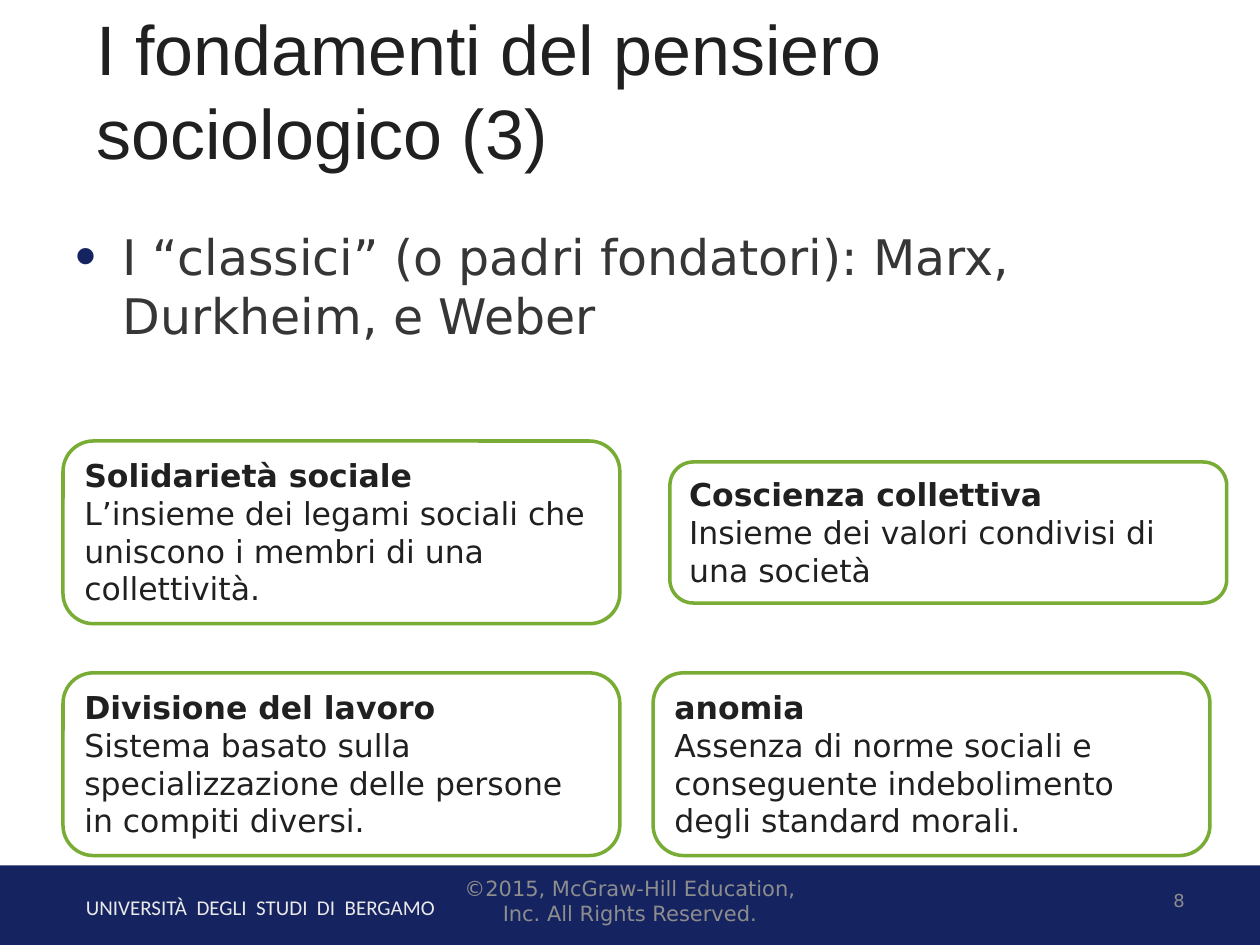
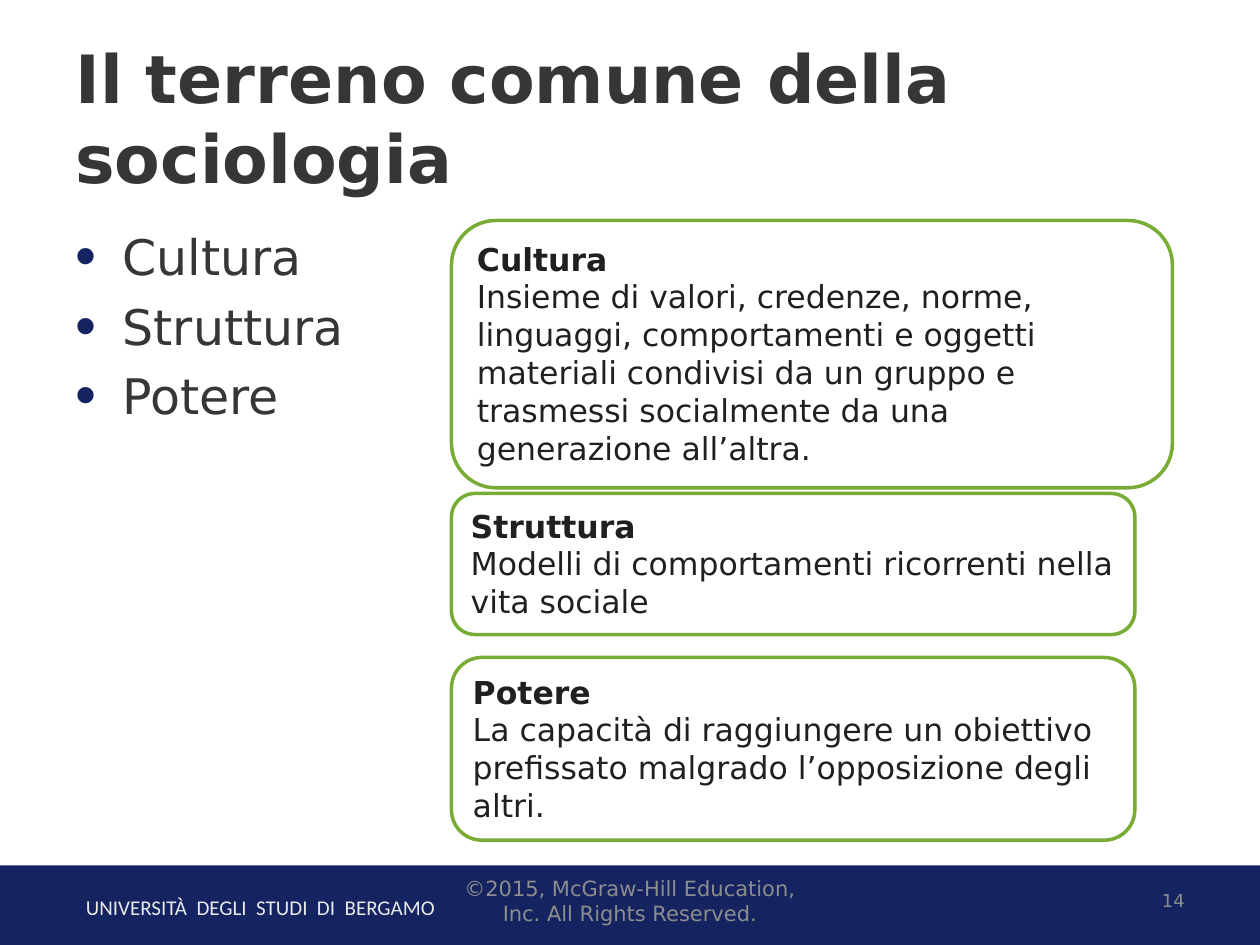
"""Builds two sociology slides with definition cards over a university footer band."""
import pptx
import pptx.dml.color
import pptx.enum.shapes
import pptx.enum.text
import pptx.oxml
import pptx.oxml.ns
import pptx.util

Pt = pptx.util.Pt
Anchor = pptx.enum.text.MSO_ANCHOR
Align = pptx.enum.text.PP_ALIGN
Preset = pptx.enum.shapes.MSO_SHAPE

NAVY, GREEN, WHITE = "152460", "78AC35", "FFFFFF"
INK, SLATE, GREY, PALE = "202020", "363636", "8D8D8D", "E9E9E9"
SANS = "DejaVu Sans"
CARD_WIDTH = 318.2
WIDE_CARD = 390.5
SHORT_CARD, TALL_CARD = 80.6, 104.4


def rgb(hex_code):
    """Return the colour for a hex string."""
    return pptx.dml.color.RGBColor.from_string(hex_code)


def add_run(paragraph, words, size, color, face=SANS, bold=False):
    """Append one formatted run to a paragraph."""
    run = paragraph.add_run()
    run.text = words
    run.font.size = Pt(size)
    run.font.name = face
    run.font.bold = bold
    run.font.color.rgb = rgb(color)


def add_frame(slide, left, top, width, height, anchor=Anchor.TOP):
    """Add a wrapping text box and return its text frame."""
    frame = slide.shapes.add_textbox(Pt(left), Pt(top), Pt(width), Pt(height)).text_frame
    frame.word_wrap = True
    frame.vertical_anchor = anchor
    return frame


def add_label(slide, words, bounds, size, color, face=SANS, bold=False,
              anchor=Anchor.MIDDLE, align=Align.LEFT):
    """Add a text box holding a single run."""
    paragraph = add_frame(slide, *bounds, anchor).paragraphs[0]
    paragraph.alignment = align
    add_run(paragraph, words, size, color, face, bold)


def add_panel(slide, preset, bounds, fill, outline=None):
    """Add a filled preset shape, outlined only if a colour is given."""
    panel = slide.shapes.add_shape(preset, *map(Pt, bounds))
    panel.shadow.inherit = False
    panel.fill.solid()
    panel.fill.fore_color.rgb = rgb(fill)
    if outline:
        panel.line.color.rgb = rgb(outline)
        panel.line.width = Pt(2)
    else:
        panel.line.fill.background()
    return panel


def add_card(slide, term, definition, left, top, width, height):
    """Add a rounded card with a bold term above its definition."""
    card = add_panel(slide, Preset.ROUNDED_RECTANGLE, (left, top, width, height), WHITE, GREEN)
    frame = card.text_frame
    frame.word_wrap = True
    frame.vertical_anchor = Anchor.TOP
    for paragraph, words in ((frame.paragraphs[0], term), (frame.add_paragraph(), definition)):
        paragraph.alignment = Align.LEFT
        add_run(paragraph, words, 18, INK, bold=words == term)


def add_bullet_mark(paragraph):
    """Give a paragraph a hanging navy bullet."""
    properties = paragraph._p.get_or_add_pPr()
    properties.set("marL", str(Pt(27)))
    properties.set("indent", str(-Pt(27)))
    namespace = pptx.oxml.ns.nsdecls("a")
    for mark in (f'<a:buClr {namespace}><a:srgbClr val="{NAVY}"/></a:buClr>',
                 f'<a:buSzPct {namespace} val="122000"/>',
                 f'<a:buFont {namespace} typeface="Arial"/>',
                 f'<a:buChar {namespace} char="•"/>'):
        properties.append(pptx.oxml.parse_xml(mark))


def add_topics(slide, topics):
    """Add the bulleted list of topics."""
    frame = add_frame(slide, 36, 126, 648, 356.4)
    for index, topic in enumerate(topics):
        paragraph = frame.add_paragraph() if index else frame.paragraphs[0]
        add_bullet_mark(paragraph)
        if index:
            paragraph.space_before = Pt(6)
        add_run(paragraph, topic, 28, SLATE)


def add_footer(slide, number):
    """Add the navy band with university, copyright and slide number."""
    add_panel(slide, Preset.RECTANGLE, (0, 494.6, 720, 45.4), NAVY)
    add_label(slide, "UNIVERSITÀ  DEGLI  STUDI  DI  BERGAMO", (42, 507.6, 419, 21.6),
              12, PALE, "Calibri", anchor=Anchor.TOP)
    add_label(slide, "©2015, McGraw-Hill Education, Inc. All Rights Reserved.",
              (247.5, 500.4, 225, 28.8), 12, GREY, align=Align.CENTER)
    add_label(slide, str(number), (516, 500.4, 168, 28.8), 10.2, GREY, align=Align.RIGHT)


def add_page(deck, number, topics):
    """Add a blank slide with its footer and topics."""
    slide = deck.slides.add_slide(deck.slide_layouts[6])
    add_footer(slide, number)
    add_topics(slide, topics)
    return slide


def main():
    """Build and save the deck."""
    deck = pptx.Presentation()
    deck.slide_width, deck.slide_height = Pt(720), Pt(540)

    founders = add_page(deck, 8, ["I “classici” (o padri fondatori): Marx, Durkheim, e Weber"])
    add_label(founders, "I fondamenti del pensiero sociologico (3)",
              (48, 12, 659.5, 78), 40, INK, "Arial")
    for term, definition, left, top, height in (
        ("Solidarietà sociale",
         "L’insieme dei legami sociali che uniscono i membri di una collettività.",
         36, 252, TALL_CARD),
        ("Divisione del lavoro",
         "Sistema basato sulla specializzazione delle persone in compiti diversi.",
         36, 384.5, TALL_CARD),
        ("Coscienza collettiva", "Insieme dei valori condivisi di una società",
         382.8, 264, SHORT_CARD),
        ("anomia",
         "Assenza di norme sociali e conseguente indebolimento degli standard morali.",
         373.2, 384.5, TALL_CARD),
    ):
        add_card(founders, term, definition, left, top, CARD_WIDTH, height)

    common_ground = add_page(deck, 14, ["Cultura", "Struttura", "Potere"])
    add_label(common_ground, "Il terreno comune della sociologia",
              (36, 21.6, 648, 90), 38, SLATE, bold=True)
    for term, definition, top, width, height in (
        ("Cultura",
         "Insieme di valori, credenze, norme, linguaggi, comportamenti e oggetti materiali "
         "condivisi da un gruppo e trasmessi socialmente da una generazione all’altra.",
         126, 412, 152.8),
        ("Struttura", "Modelli di comportamenti ricorrenti nella vita sociale",
         282, WIDE_CARD, SHORT_CARD),
        ("Potere",
         "La capacità di raggiungere un obiettivo prefissato malgrado l’opposizione degli altri.",
         375.7, WIDE_CARD, TALL_CARD),
    ):
        add_card(common_ground, term, definition, 258, top, width, height)

    deck.save("out.pptx")


if __name__ == "__main__":
    main()
